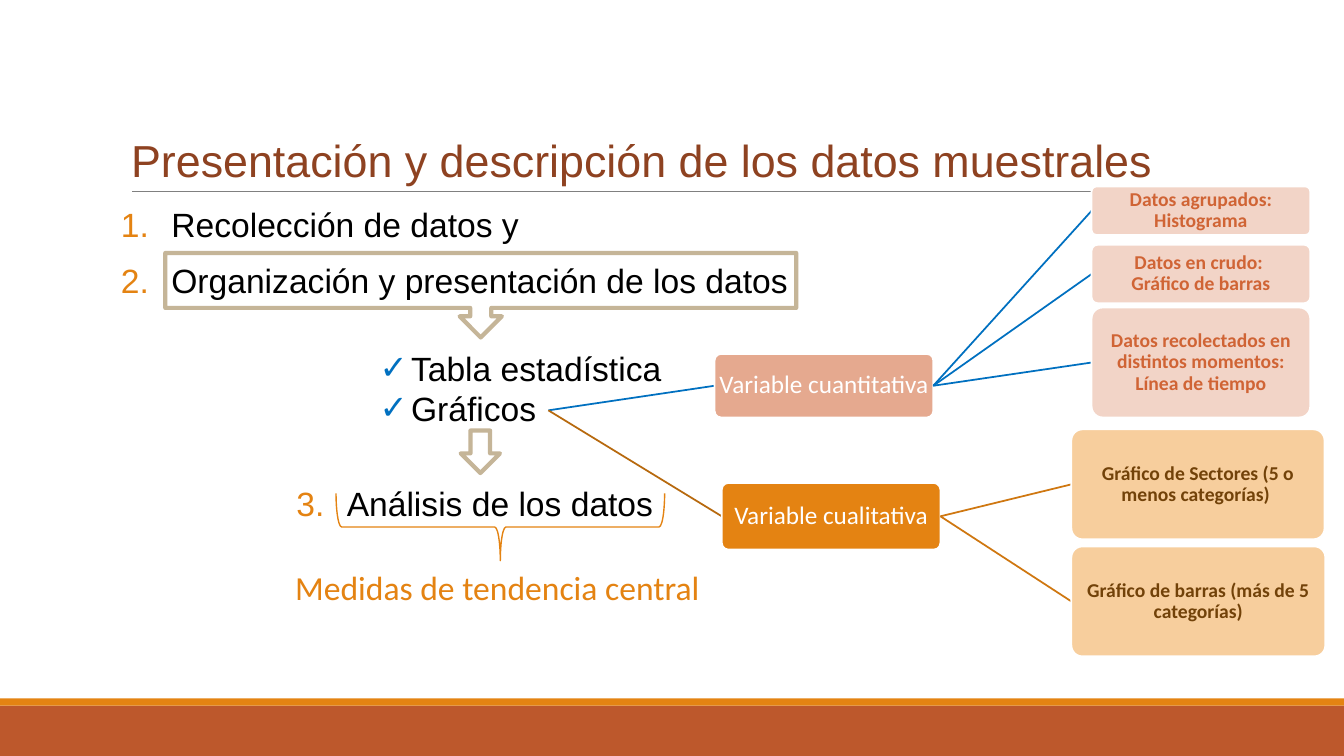
from dataclasses import dataclass
from typing import Any, Optional

from lxml import etree
from pptx import Presentation
from pptx import util as u
from pptx.dml.color import RGBColor
from pptx.enum import shapes, text
from pptx.oxml import ns

COLORS = {
    "white": "FFFFFF", "black": "000000", "title": "8E4221", "rust": "BD582C",
    "orange": "E48312", "gray": "808080", "tan": "C5B598", "blue": "0070C0",
    "salmon": "E5A98F", "pink": "F2D4C7", "coral": "D06435", "peach": "F7CE9D",
    "brown": "724209", "amber": "B7690E", "ochre": "CF7710",
}
MSO = shapes.MSO_SHAPE
AL = text.PP_ALIGN
ANCHOR = text.MSO_ANCHOR
SLIDE_W, SLIDE_H = 33.87, 19.05
ROOT = (13.82, 10.34)
NO_SIDES = {"margin_left": 0, "margin_right": 0}


@dataclass
class Box:
    x: float
    y: float
    w: float
    h: float

    def lengths(self) -> list[int]:
        return [u.Cm(v) for v in (self.x, self.y, self.w, self.h)]

    def left_mid(self) -> tuple[float, float]:
        return self.x, self.y + self.h / 2

    def right_mid(self) -> tuple[float, float]:
        return self.x + self.w, self.y + self.h / 2


@dataclass
class Style:
    size: float
    color: str
    font: str = "Arial"
    bold: bool = False


@dataclass
class Bullet:
    tag: str
    attrs: dict[str, str]
    color: str
    indent: float


@dataclass
class TextBlock:
    box: Box
    lines: list[str]
    style: Style
    frame: dict[str, Any]
    para: dict[str, Any]
    gap: float = 0
    bullet: Optional[Bullet] = None


@dataclass
class Figure:
    kind: Any
    box: Box
    fill: Optional[str] = None
    line: Optional[str] = None
    width: float = 1
    rotation: float = 0


@dataclass
class Node:
    box: Box
    lines: list[str]
    fill: str
    style: Style
    edge: str


def rgb(name: str) -> RGBColor:
    return RGBColor.from_string(COLORS[name])


def assign(obj: Any, values: dict[str, Any]) -> None:
    for name, value in values.items():
        setattr(obj, name, value)


def add_bullet(p: Any, bullet: Bullet) -> None:
    pPr = p._p.get_or_add_pPr()
    indent = u.Cm(bullet.indent)
    pPr.set("marL", str(indent))
    pPr.set("indent", str(-indent))
    clr = etree.SubElement(pPr, ns.qn("a:buClr"))
    etree.SubElement(clr, ns.qn("a:srgbClr"), val=COLORS[bullet.color])
    etree.SubElement(pPr, ns.qn("a:buFont"), typeface="Arial")
    etree.SubElement(pPr, ns.qn(bullet.tag), **bullet.attrs)


def write(tf: Any, lines: list[str], style: Style, frame: dict[str, Any],
          para: dict[str, Any], gap: float = 0,
          bullet: Optional[Bullet] = None) -> None:
    assign(tf, {"word_wrap": True, "auto_size": text.MSO_AUTO_SIZE.NONE} | frame)
    for i, line in enumerate(lines):
        p = tf.add_paragraph() if i else tf.paragraphs[0]
        if bullet:
            add_bullet(p, bullet)
        assign(p, para)
        if i and gap:
            p.space_before = u.Pt(gap)
        r = p.add_run()
        r.text = line
        assign(r.font, {"size": u.Pt(style.size), "name": style.font, "bold": style.bold})
        r.font.color.rgb = rgb(style.color)


def add_block(s: Any, block: TextBlock) -> None:
    sp = s.shapes.add_textbox(*block.box.lengths())
    write(sp.text_frame, block.lines, block.style, block.frame, block.para,
          block.gap, block.bullet)


def add_figure(s: Any, fig: Figure) -> Any:
    sp = s.shapes.add_shape(fig.kind, *fig.box.lengths())
    sp.shadow.inherit = False
    sp.rotation = fig.rotation
    if fig.fill:
        sp.fill.solid()
        sp.fill.fore_color.rgb = rgb(fig.fill)
    else:
        sp.fill.background()
    if fig.line:
        sp.line.color.rgb = rgb(fig.line)
        sp.line.width = u.Pt(fig.width)
    else:
        sp.line.fill.background()
    return sp


def add_line(s: Any, start: tuple[float, float], end: tuple[float, float],
             color: str, width: float) -> None:
    points = [u.Cm(v) for v in (*start, *end)]
    cx = s.shapes.add_connector(shapes.MSO_CONNECTOR.STRAIGHT, *points)
    cx.line.color.rgb = rgb(color)
    cx.line.width = u.Pt(width)
    etree.SubElement(cx._element.spPr, ns.qn("a:effectLst"))


def add_node(s: Any, node: Node, start: tuple[float, float]) -> None:
    add_line(s, start, node.box.left_mid(), node.edge, 1.25)
    sp = add_figure(s, Figure(MSO.ROUNDED_RECTANGLE, node.box, node.fill, "white", 1.25))
    sp.adjustments[0] = 0.1
    sides = ("left", "right", "top", "bottom")
    frame = {f"margin_{side}": u.Cm(0.03) for side in sides}
    write(sp.text_frame, node.lines, node.style,
          frame | {"vertical_anchor": ANCHOR.MIDDLE},
          {"alignment": AL.CENTER, "line_spacing": 0.9})


def main() -> None:
    prs = Presentation()
    prs.slide_width, prs.slide_height = u.Cm(SLIDE_W), u.Cm(SLIDE_H)
    s = prs.slides.add_slide(prs.slide_layouts[5])

    add_figure(s, Figure(MSO.RECTANGLE, Box(0, 17.78, SLIDE_W, 1.27), "rust"))
    add_figure(s, Figure(MSO.RECTANGLE, Box(0, 17.6, SLIDE_W, 0.18), "orange"))
    add_line(s, (3.33, 4.83), (31.01, 4.83), "gray", 0.5)

    title = s.shapes.title
    title_box = Box(3.05, 0.79, 27.94, 4.04).lengths()
    assign(title, dict(zip(("left", "top", "width", "height"), title_box)))
    write(title.text_frame, ["Presentación y descripción de los datos muestrales"],
          Style(32, "title"), {"vertical_anchor": ANCHOR.BOTTOM},
          {"alignment": AL.LEFT, "line_spacing": 0.85})

    body = Style(24, "black")
    step = {"line_spacing": 0.9, "space_after": u.Pt(2)}
    unwrapped = {"word_wrap": False, "auto_size": text.MSO_AUTO_SIZE.SHAPE_TO_FIT_TEXT}
    numbers = Bullet("a:buAutoNum", {"type": "arabicPeriod"}, "orange", 1.27)
    third = Bullet("a:buAutoNum", {"type": "arabicPeriod", "startAt": "3"}, "orange", 1.27)
    checks = Bullet("a:buChar", {"char": "✓"}, "blue", 0.79)
    blocks = [
        TextBlock(Box(3.05, 5.13, 27.94, 3.12),
                  ["Recolección de datos y", "Organización y presentación de los datos"],
                  body, NO_SIDES, step, 12, numbers),
        TextBlock(Box(9.32, 8.64, 7.7, 2.31), ["Tabla estadística", "Gráficos"],
                  body, unwrapped, {}, 0, checks),
        TextBlock(Box(7.47, 12.17, 9.27, 3.12), ["Análisis de los datos"],
                  body, NO_SIDES, step, 0, third),
        TextBlock(Box(7.19, 14.15, 10.82, 1.27), ["Medidas de tendencia central"],
                  Style(24, "orange", "Calibri"), unwrapped, {}),
    ]
    for block in blocks:
        add_block(s, block)

    figures = [
        Figure(MSO.RIGHT_ARROW_CALLOUT, Box(11.05, -0.51, 2.13, 15.9), None, "tan", 3, 90),
        Figure(MSO.DOWN_ARROW, Box(11.61, 10.85, 0.99, 1.07), "white", "tan", 3),
        Figure(MSO.LEFT_BRACE, Box(11.76, 9.14, 1.7, 8.28), None, "orange", 1, 270),
    ]
    for fig in figures:
        add_figure(s, fig)

    branch = Style(18, "white", "Calibri")
    quant = Style(14, "coral", "Calibri", True)
    qual = Style(14, "brown", "Calibri", True)
    tree = [
        (Node(Box(18.01, 8.92, 5.51, 1.6), ["Variable cuantitativa"], "salmon", branch, "blue"), [
            Node(Box(27.51, 4.7, 5.51, 1.22), ["Datos agrupados: Histograma"],
                 "pink", quant, "blue"),
            Node(Box(27.51, 6.17, 5.51, 1.47), ["Datos en crudo: ", "Gráfico de barras"],
                 "pink", quant, "blue"),
            Node(Box(27.51, 7.75, 5.51, 2.77),
                 ["Datos recolectados en distintos momentos: Línea de tiempo"],
                 "pink", quant, "blue")]),
        (Node(Box(18.19, 12.17, 5.51, 1.68), ["Variable cualitativa"], "orange", branch, "amber"), [
            Node(Box(27, 10.82, 6.38, 2.77), ["Gráfico de Sectores (5 o menos categorías) "],
                 "peach", qual, "ochre"),
            Node(Box(27, 13.77, 6.4, 2.77), ["Gráfico de barras (más de 5 categorías)"],
                 "peach", qual, "ochre")]),
    ]
    for parent, children in tree:
        add_node(s, parent, ROOT)
        for child in children:
            add_node(s, child, parent.box.right_mid())

    prs.save("out.pptx")


if __name__ == "__main__":
    main()
